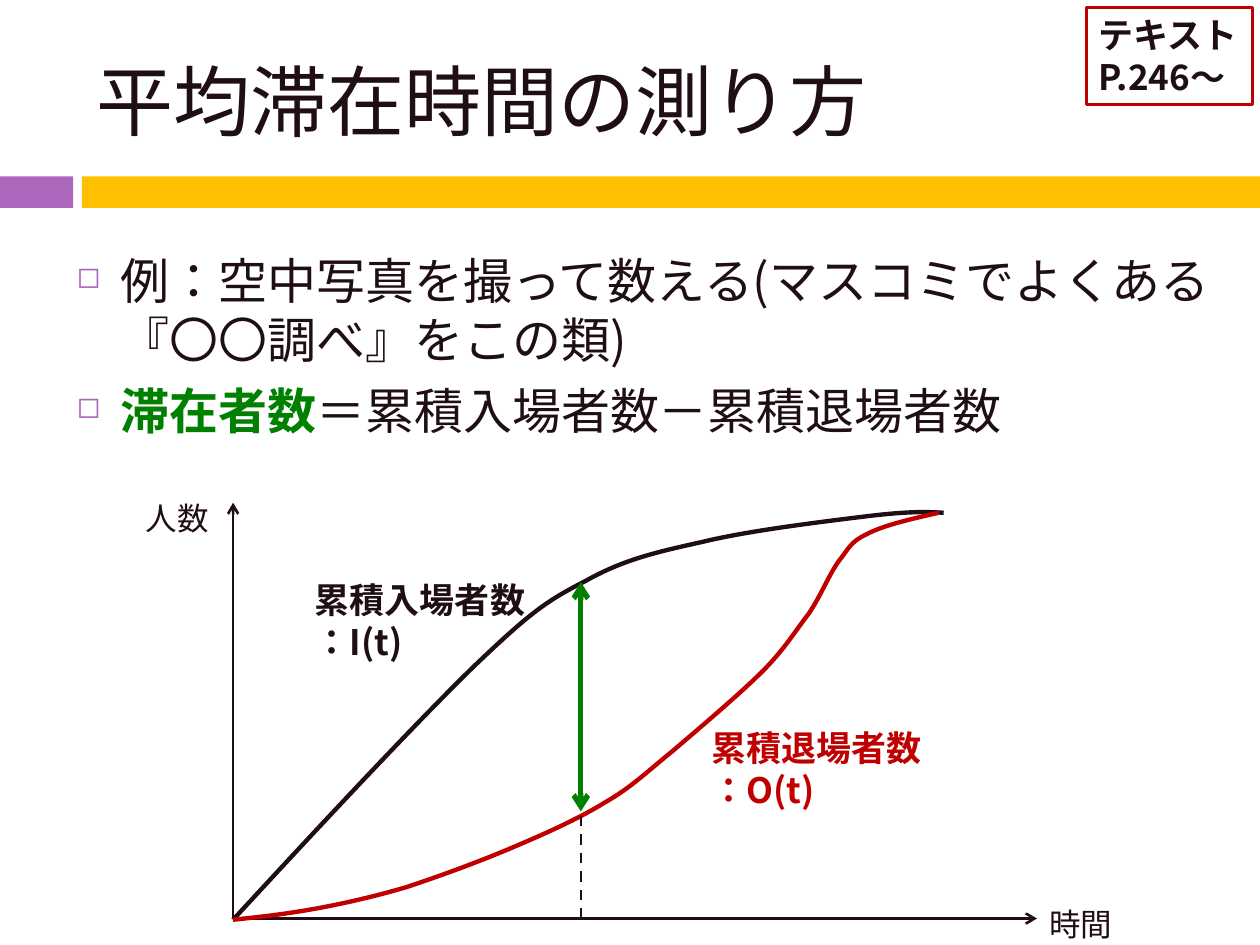
import pptx
import pptx.util
import pptx.dml.color
import pptx.enum.dml
import pptx.enum.lang
import pptx.enum.shapes
import pptx.enum.text
import pptx.oxml.ns
from lxml import etree

RGBColor = pptx.dml.color.RGBColor
INK = RGBColor(0x20, 0x0E, 0x17)
PURPLE = RGBColor(0xAC, 0x66, 0xBB)
GOLD = RGBColor(0xFF, 0xC0, 0x00)
RED = RGBColor(0xC0, 0x00, 0x00)
GREEN = RGBColor(0x00, 0x80, 0x00)
WHITE = RGBColor(0xFF, 0xFF, 0xFF)

SCALE = 9144
FONT = "Noto Sans CJK JP"
JAPANESE = pptx.enum.lang.MSO_LANGUAGE_ID.JAPANESE
MIDDLE = pptx.enum.text.MSO_ANCHOR.MIDDLE
TOP = pptx.enum.text.MSO_ANCHOR.TOP
FIXED = pptx.enum.text.MSO_AUTO_SIZE.NONE
GROW = pptx.enum.text.MSO_AUTO_SIZE.SHAPE_TO_FIT_TEXT
ORIGIN_X, ORIGIN_Y = 185, 729
TIME_X = 461
ENTRY_Y, EXIT_Y = 462, 644

ENTRY_CURVE = [
    (185, 730), (257, 652), (329, 575), (375, 530), (422, 485), (434, 477),
    (465, 461), (495, 444), (522, 438), (558, 430), (595, 421), (654, 414),
    (686, 410), (718, 406), (734, 406), (749, 407),
]
EXIT_CURVE = [
    (185, 730), (204, 728), (223, 726), (246, 722), (269, 718), (296, 712),
    (323, 704), (350, 695), (380, 684), (406, 673), (432, 662), (459, 650),
    (480, 637), (501, 625), (513, 613), (534, 596), (555, 578), (587, 551),
    (605, 533), (623, 515), (631, 501), (642, 487), (652, 472), (658, 456),
    (666, 445), (674, 435), (675, 430), (688, 424), (701, 417), (723, 412),
    (745, 407),
]


def px(*lengths):
    return [pptx.util.Emu(length * SCALE) for length in lengths]


def apply_format(target, values):
    for name, value in values.items():
        setattr(target, name, value)


def add_xml(parent, tag, **attributes):
    return etree.SubElement(parent, pptx.oxml.ns.qn(tag), attributes)


def write_spans(para, spans, size):
    for text, color, bold in spans:
        span = para.add_run()
        span.text = text
        apply_format(span.font, {"name": FONT, "size": pptx.util.Pt(size),
                                 "bold": bold, "language_id": JAPANESE})
        span.font.color.rgb = color
        add_xml(span.font._element, "a:ea", typeface=FONT)


def write_text(shape, lines, size, wrap=False, anchor=TOP):
    frame = shape.text_frame
    apply_format(frame, {"word_wrap": wrap, "vertical_anchor": anchor,
                         "auto_size": FIXED if wrap else GROW})
    for index, spans in enumerate(lines):
        para = frame.add_paragraph() if index else frame.paragraphs[0]
        para.alignment = pptx.enum.text.PP_ALIGN.LEFT
        write_spans(para, spans, size)
    return frame


def add_text(page, bounds, lines, size, **options):
    box = page.shapes.add_textbox(*px(*bounds))
    return write_text(box, lines, size, **options)


def add_label(page, bounds, lines, size=20, color=INK, bold=True):
    add_text(page, bounds, [[(line, color, bold)] for line in lines], size)


def add_bullets(page, bounds, lines, size):
    frame = add_text(page, bounds, lines, size, wrap=True)
    for para in frame.paragraphs:
        para.space_before = pptx.util.Pt(7)
        properties = para._p.get_or_add_pPr()
        indent = 35 * SCALE
        properties.set("marL", str(indent))
        properties.set("indent", str(-indent))
        add_xml(add_xml(properties, "a:buClr"), "a:srgbClr", val=str(PURPLE))
        add_xml(properties, "a:buSzPct", val="60000")
        add_xml(properties, "a:buFont", typeface="OpenSymbol")
        add_xml(properties, "a:buChar", char="◻")


def add_rectangle(page, bounds, fill=None, line=None):
    kind = pptx.enum.shapes.MSO_SHAPE.RECTANGLE
    shape = page.shapes.add_shape(kind, *px(*bounds))
    shape.shadow.inherit = False
    if fill is None:
        shape.fill.background()
    else:
        shape.fill.solid()
        shape.fill.fore_color.rgb = fill
    if line is None:
        shape.line.fill.background()
    else:
        shape.line.color.rgb = line
        shape.line.width = pptx.util.Pt(1.75)
    return shape


def add_line(page, start, end, color=INK, width=1.5, dash=None, arrows=()):
    kind = pptx.enum.shapes.MSO_CONNECTOR.STRAIGHT
    line = page.shapes.add_connector(kind, *px(*start, *end))
    line.line.color.rgb = color
    apply_format(line.line, {"width": pptx.util.Pt(width), "dash_style": dash})
    for end_name in arrows:
        add_xml(line.line._get_or_add_ln(), f"a:{end_name}", type="arrow")
    add_xml(line._element.spPr, "a:effectLst")


def add_curve(page, controls, color):
    builder = page.shapes.build_freeform(*px(*controls[0]))
    builder.add_line_segments([px(*knot) for knot in controls[3::3]], close=False)
    curve = builder.convert_to_shape()
    segments = list(curve._element.iter(pptx.oxml.ns.qn("a:lnTo")))
    for index, segment in enumerate(segments):
        segment.tag = pptx.oxml.ns.qn("a:cubicBezTo")
        segment = next(item for item in curve._element.iter(segment.tag)
                       if len(item) == 1)
        segment.remove(segment[0])
        for point in controls[3 * index + 1:3 * index + 4]:
            x, y = px(*point)
            add_xml(segment, "a:pt", x=str(x - curve.left), y=str(y - curve.top))
    curve.shadow.inherit = False
    curve.fill.background()
    curve.line.color.rgb = color
    curve.line.width = pptx.util.Pt(2.5)


def add_diagram(page):
    origin = (ORIGIN_X, ORIGIN_Y)
    for tip in ((ORIGIN_X, 399), (823, ORIGIN_Y)):
        add_line(page, origin, tip, arrows=["tailEnd"])
    add_curve(page, ENTRY_CURVE, INK)
    add_curve(page, EXIT_CURVE, RED)
    add_line(page, (TIME_X, ORIGIN_Y), (TIME_X, ENTRY_Y),
             dash=pptx.enum.dml.MSO_LINE.DASH)
    add_label(page, (240, 454, 188, 77), ["累積入場者数", "：I(t)"])
    add_label(page, (555, 572, 188, 77), ["累積退場者数", "：O(t)"], color=RED)
    add_label(page, (823, 713, 71, 40), ["時間"], size=18, bold=False)
    add_label(page, (106, 391, 71, 40), ["人数"], size=18, bold=False)
    add_line(page, (TIME_X, ENTRY_Y), (TIME_X, EXIT_Y), GREEN, 3,
             arrows=["headEnd", "tailEnd"])


def main():
    deck = pptx.Presentation()
    width, height = px(1000, 750)
    apply_format(deck, {"slide_width": width, "slide_height": height})
    page = deck.slides.add_slide(deck.slide_layouts[6])
    page.background.fill.solid()
    page.background.fill.fore_color.rgb = WHITE

    add_rectangle(page, (0, 140, 58, 25), fill=PURPLE)
    add_rectangle(page, (65, 140, 935, 25), fill=GOLD)
    add_text(page, (67, 25, 892, 108), [[("平均滞在時間の測り方", INK, False)]], 44,
             wrap=True, anchor=MIDDLE)
    add_bullets(page, (51, 194, 921, 520), [
        [("例：空中写真を撮って数える(マスコミでよくある『〇〇調べ』をこの類)", INK, False)],
        [("滞在者数", GREEN, True), ("＝累積入場者数－累積退場者数", INK, False)],
    ], 28)
    add_diagram(page)
    reference = add_rectangle(page, (862, 6, 132, 77), line=RED)
    write_text(reference, [[("テキスト", INK, True)], [("P.246～", INK, True)]], 20)
    deck.save("out.pptx")


if __name__ == "__main__":
    main()
